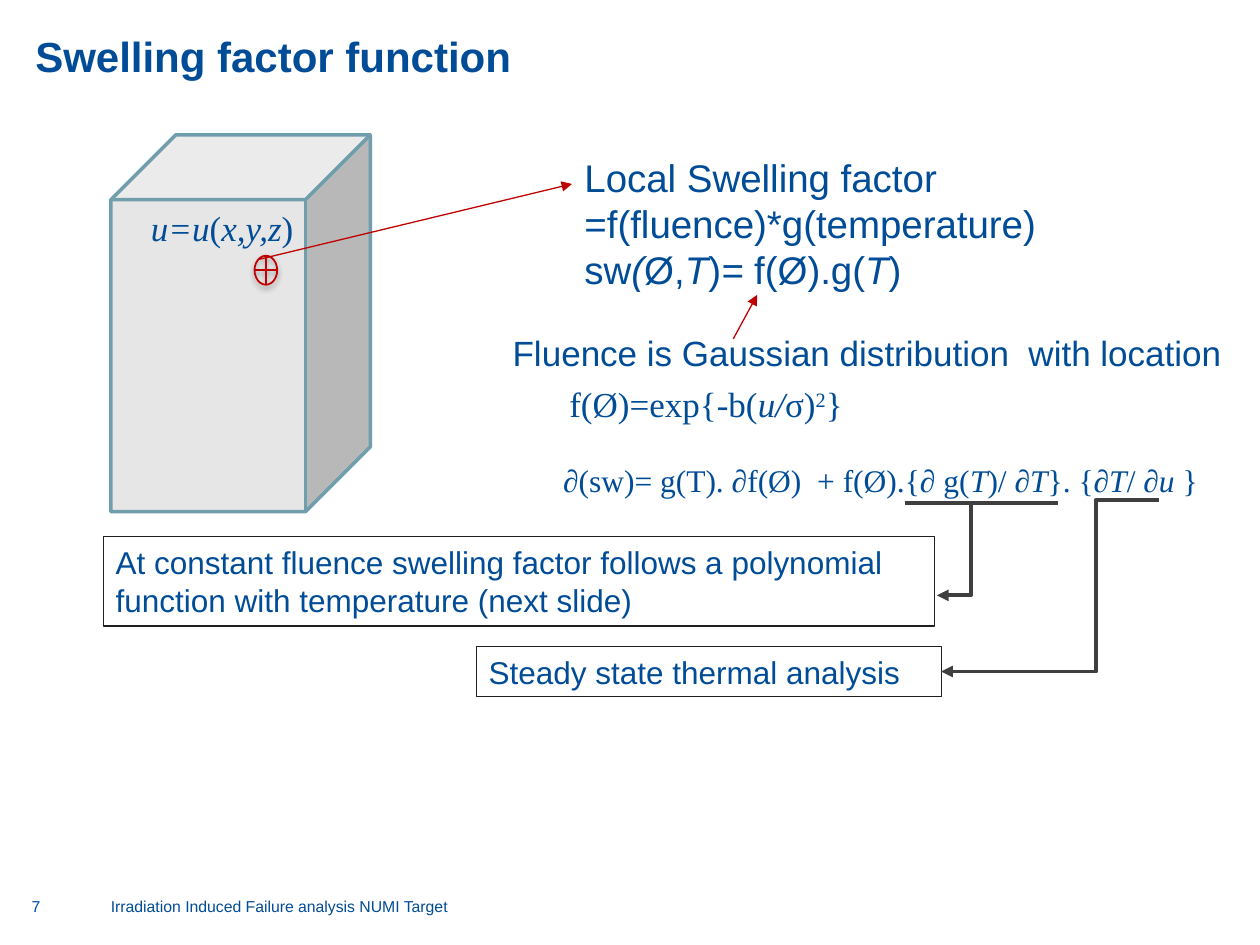
from lxml import etree
from pptx import Presentation
from pptx.dml.color import RGBColor
from pptx.enum.shapes import MSO_CONNECTOR, MSO_SHAPE
from pptx.enum.text import MSO_ANCHOR, MSO_AUTO_SIZE, PP_ALIGN
from pptx.oxml.ns import qn
from pptx.util import Inches, Pt

STRAIGHT, ELBOW = MSO_CONNECTOR.STRAIGHT, MSO_CONNECTOR.ELBOW
CUBE, OR_SYMBOL = MSO_SHAPE.CUBE, MSO_SHAPE.FLOWCHART_OR
TOP, LEFT = MSO_ANCHOR.TOP, PP_ALIGN.LEFT
NO_AUTOSIZE = MSO_AUTO_SIZE.NONE

BLUE = RGBColor(0x00, 0x4C, 0x97)
RED = RGBColor(0xC0, 0x00, 0x00)
DARK = RGBColor(0x3F, 0x3F, 0x3F)
BLACK = RGBColor(0x20, 0x20, 0x20)
GREY = RGBColor(0xE6, 0xE6, 0xE6)
TEAL = RGBColor(0x71, 0x9E, 0xAD)
SANS, SERIF = "Arial", "Times New Roman"


def write_text(shape, lines, size, font_name=SANS, wrap=True, bold=False):
    frame = shape.text_frame
    frame.auto_size = NO_AUTOSIZE
    frame.word_wrap = wrap
    frame.vertical_anchor = TOP
    for index, line in enumerate(lines):
        paragraph = frame.add_paragraph() if index else frame.paragraphs[0]
        paragraph.alignment = LEFT
        for position, part in enumerate(line.split("_")):
            if not part:
                continue
            run = paragraph.add_run()
            run.text = part
            run.font.color.rgb = BLUE
            values = {"name": font_name, "size": Pt(size), "bold": bold,
                      "italic": position % 2 == 1}
            for name, value in values.items():
                setattr(run.font, name, value)
    return frame


def add_line(kind, points, color, width, arrow=True):
    connector = slide.shapes.add_connector(kind, *[Inches(value) for value in points])
    connector.line.color.rgb = color
    connector.line.width = Pt(width)
    if arrow:
        etree.SubElement(connector.line._get_or_add_ln(), qn("a:tailEnd"), type="triangle")
    etree.SubElement(connector._element.spPr, qn("a:effectLst"))
    return connector


presentation = Presentation()
presentation.slide_width, presentation.slide_height = Inches(10), Inches(7.5)
slide = presentation.slides.add_slide(presentation.slide_layouts[5])

title = slide.shapes.title
title.left, title.top, title.width, title.height = map(Inches, (0.18, 0.19, 4.82, 0.5))
write_text(title, ["Swelling factor function"], 24, bold=True)

cube = slide.shapes.add_shape(CUBE, *map(Inches, (0.88, 1.07, 2.06, 2.99)))
cube.shadow.inherit = False
cube.fill.solid()
cube.fill.fore_color.rgb = GREY
cube.line.color.rgb = TEAL
cube.line.width = Pt(2)

marker = slide.shapes.add_shape(OR_SYMBOL, *map(Inches, (2.02, 2.03, 0.18, 0.23)))
marker.shadow.inherit = False
marker.fill.background()
marker.line.color.rgb = RED
marker.line.width = Pt(1)
shadow = etree.SubElement(
    marker._element.spPr.find(qn("a:effectLst")), qn("a:outerShdw"),
    blurRad=str(Pt(3.1)), dist=str(Pt(1.8)), dir="5400000", rotWithShape="0")
shadow_color = etree.SubElement(shadow, qn("a:srgbClr"), val="000000")
etree.SubElement(shadow_color, qn("a:alpha"), val="35000")

texts = [
    ((4.54, 1.17, 5.05, 1.21),
     ["Local Swelling factor =f(fluence)*g(temperature)", "sw_(_Ø,_T_)_=_ f(Ø).g(_T_)"],
     22, SANS, True),
    ((3.97, 2.58, 5.88, 0.44),
     ["Fluence is Gaussian distribution  with location"], 20, SANS, False),
    ((4.37, 3.61, 5.29, 0.4),
     ["∂(sw)= g(T). ∂f(Ø)  + f(Ø).{∂ g(_T_)/ ∂_T_}. {∂_T_/ ∂_u_ }"], 18, SERIF, False),
    ((1.1, 1.59, 1.34, 0.44), ["_u=u_(_x,y,z_)"], 20, SERIF, False),
]
for box, lines, size, font_name, wrap in texts:
    write_text(slide.shapes.add_textbox(*map(Inches, box)), lines, size, font_name, wrap)

fluence_box = slide.shapes.add_textbox(*map(Inches, (4.42, 2.99, 2.4, 0.44)))
fluence_frame = write_text(fluence_box, ["f(Ø)=exp{-b(_u/_σ)__2__}"], 20, SERIF, False)
exponent = fluence_frame.paragraphs[0].runs[3]
exponent._r.get_or_add_rPr().set("baseline", "30000")

notes = [
    ((0.82, 4.26, 6.6, 0.71),
     "At constant fluence swelling factor follows a polynomial function with temperature (next slide)"),
    ((3.78, 5.13, 3.69, 0.4), "Steady state thermal analysis"),
]
for box, text in notes:
    note = slide.shapes.add_textbox(*map(Inches, box))
    note.line.color.rgb = BLACK
    note.line.width = Pt(0.75)
    write_text(note, [text], 18)

add_line(STRAIGHT, (5.82, 2.69, 6.01, 2.34), RED, 0.75)
add_line(STRAIGHT, (2.05, 2.06, 4.54, 1.46), RED, 0.75)
add_line(STRAIGHT, (7.18, 3.99, 8.4, 3.99), DARK, 2.25, arrow=False)

temperature_link = add_line(ELBOW, (7.21, 4.23, 7.93, 4.5), DARK, 2.25)
temperature_link._element.spPr.find(qn("a:prstGeom")).set("prst", "bentConnector2")
temperature_link._element.spPr.find(qn("a:xfrm")).set("rot", "5400000")

thermal_link = add_line(ELBOW, (9.2, 3.97, 7.47, 5.33), DARK, 2.25)
adjustments = thermal_link._element.spPr.find(qn("a:prstGeom")).get_or_add_avLst()
etree.SubElement(adjustments, qn("a:gd"), name="adj1", fmla="val 28900")

footers = [(0.25, 0.49, "7"), (0.88, 5.88, "Irradiation Induced Failure analysis NUMI Target")]
for left, width, text in footers:
    footer = slide.shapes.add_textbox(*map(Inches, (left, 7.12, width, 0.26)))
    frame = write_text(footer, [text], 9)
    for side in ("left", "top", "right", "bottom"):
        setattr(frame, f"margin_{side}", 0)

presentation.save("out.pptx")
